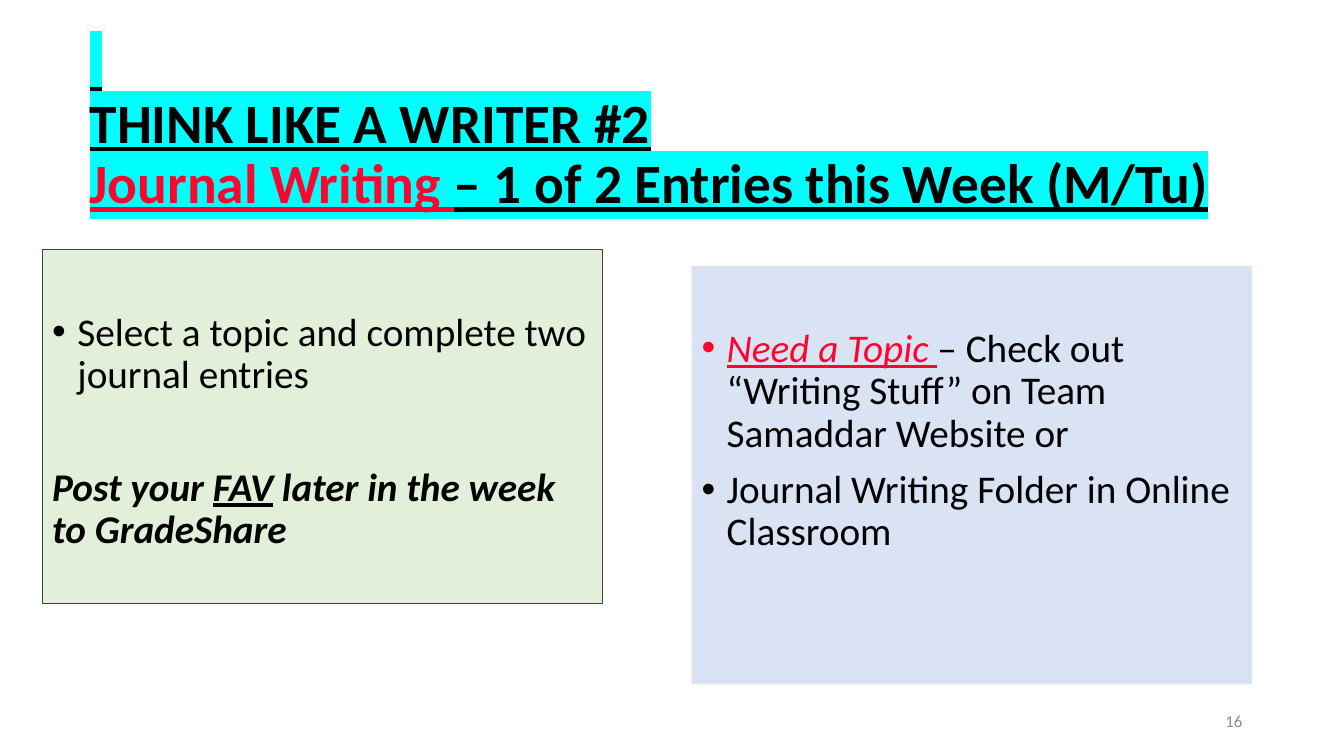
from lxml.etree import SubElement
from pptx import Presentation
from pptx.dml.color import RGBColor
from pptx.enum.shapes import MSO_SHAPE as Shape
from pptx.enum.text import MSO_ANCHOR as Anchor, PP_ALIGN as Align
from pptx.oxml.ns import qn
from pptx.util import Inches, Pt

WIDTH, HEIGHT = 13.33, 7.5
BLACK, RED, CYAN = "000000", "FA062F", "00FFFF"
GREEN, BLUE, OUTLINE, GREY = "E2F0D9", "DAE3F3", "404040", "8C8C8C"
CARD_WIDTH = 5.56


def color(hex_string):
    return RGBColor.from_string(hex_string)


def add_run(paragraph, text, size, ink=BLACK, bold=False, italic=False,
            underline=False, highlight=None):
    run = paragraph.add_run()
    run.text = text
    font = run.font
    font.name, font.size = "Calibri", Pt(size)
    font.bold, font.italic, font.underline = bold, italic, underline
    font.color.rgb = color(ink)
    if highlight:
        marker = SubElement(run._r.rPr, qn("a:highlight"))
        SubElement(marker, qn("a:srgbClr"), val=highlight)
        run._r.rPr.find(qn("a:solidFill")).addnext(marker)


def add_bullet(paragraph):
    props = paragraph._p.get_or_add_pPr()
    props.set("marL", str(Inches(0.25)))
    props.set("indent", str(-Inches(0.25)))
    SubElement(props, qn("a:buFont"), typeface="Arial")
    SubElement(props, qn("a:buChar"), char="•")


def add_text_box(slide, box, anchor):
    frame = slide.shapes.add_textbox(*map(Inches, box)).text_frame
    frame.word_wrap = True
    frame.vertical_anchor = anchor
    return frame


def add_title(slide, box):
    frame = add_text_box(slide, box, Anchor.BOTTOM)
    frame.margin_bottom = Inches(0.14)
    heading = frame.paragraphs[0]
    heading.line_spacing = 0.9
    style = dict(size=39.6, bold=True, underline=True, highlight=CYAN)
    add_run(heading, " ", **style)
    heading.add_line_break()
    add_run(heading, "THINK LIKE A WRITER #2", **style)
    heading.add_line_break()
    add_run(heading, "Journal Writing ", ink=RED, **style)
    add_run(heading, "– 1 of 2 Entries this Week (M/Tu)", **style)


def add_card(slide, box, fill, outline, items):
    card = slide.shapes.add_shape(Shape.RECTANGLE, *map(Inches, box))
    card.shadow.inherit = False
    card.fill.solid()
    card.fill.fore_color.rgb = color(fill)
    if outline:
        card.line.color.rgb = color(outline)
        card.line.width = Pt(0.75)
    else:
        card.line.fill.background()
    frame = card.text_frame
    frame.word_wrap = True
    frame.vertical_anchor = Anchor.TOP
    frame.margin_top = Inches(0.62)
    for index, (bulleted, space_before, runs) in enumerate(items):
        item = frame.add_paragraph() if index else frame.paragraphs[0]
        item.alignment = Align.LEFT
        item.line_spacing = 0.9
        item.space_before = Pt(space_before)
        if bulleted:
            add_bullet(item)
        for text, style in runs:
            add_run(item, text, 28, **style)


def add_slide_number(slide, box, number):
    frame = add_text_box(slide, box, Anchor.MIDDLE)
    frame.paragraphs[0].alignment = Align.RIGHT
    add_run(frame.paragraphs[0], number, 12, GREY)


def main():
    deck = Presentation()
    deck.slide_width, deck.slide_height = Inches(WIDTH), Inches(HEIGHT)
    slide = deck.slides.add_slide(deck.slide_layouts[6])
    strong = dict(bold=True, italic=True)
    add_title(slide, (0.79, 0.83, 11.5, 1.45))
    add_card(slide, (0.42, 2.48, CARD_WIDTH, 3.51), GREEN, OUTLINE, [
        (True, 0, [("Select a topic and complete two journal entries", {})]),
        (False, 50, [
            ("Post your ", strong),
            ("FAV", dict(strong, underline=True)),
            (" later in the week to GradeShare", strong),
        ]),
    ])
    add_slide_number(slide, (9.42, 6.95, 3, 0.4), "16")
    add_card(slide, (6.86, 2.64, CARD_WIDTH, 4.15), BLUE, None, [
        (True, 0, [
            ("Need a Topic ", dict(ink=RED, italic=True, underline=True)),
            ("– Check out “Writing Stuff” on Team Samaddar Website or", {}),
        ]),
        (True, 10, [("Journal Writing Folder in Online Classroom", {})]),
    ])
    deck.save("out.pptx")


if __name__ == "__main__":
    main()
